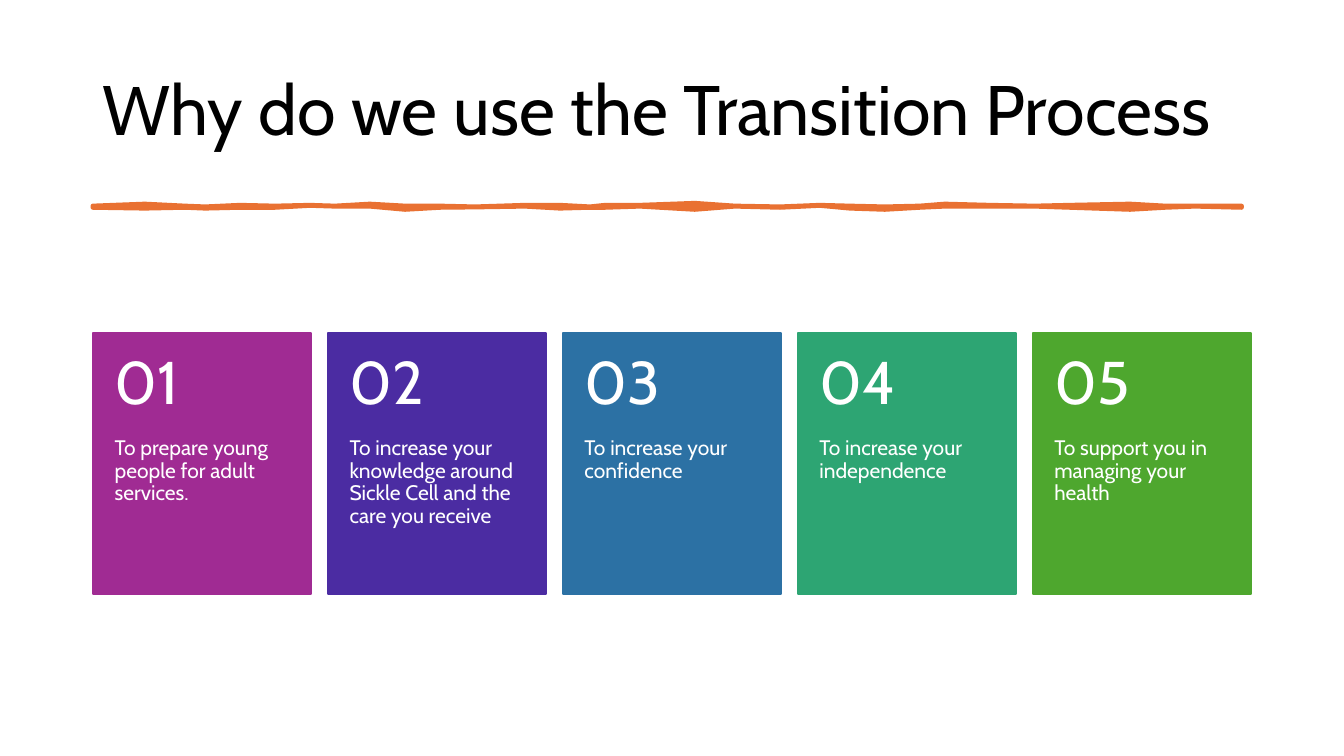
from pptx import Presentation
from pptx.dml.color import RGBColor
from pptx.enum.shapes import MSO_SHAPE
from pptx.enum.text import MSO_ANCHOR
from pptx.util import Cm, Pt


def paint(shape, color, line_width):
    shape.shadow.inherit = False
    shape.fill.solid()
    shape.fill.fore_color.rgb = RGBColor.from_string(color)
    shape.line.color.rgb = RGBColor.from_string(color)
    shape.line.width = Pt(line_width)


def add_text(text, place, size, color, anchor, insets):
    box = page.shapes.add_textbox(*[Cm(length) for length in place])
    frame = box.text_frame
    frame.word_wrap = True
    frame.vertical_anchor = anchor
    frame.margin_left = frame.margin_right = Cm(insets[0])
    frame.margin_top = Cm(insets[1])
    frame.margin_bottom = Cm(insets[2])
    frame.text = text
    para = frame.paragraphs[0]
    para.line_spacing = 0.9
    span = para.runs[0]
    span.font.name = "Cabin"
    span.font.size = Pt(size)
    span.font.color.rgb = RGBColor.from_string(color)


deck = Presentation()
deck.slide_width = Cm(33.87)
deck.slide_height = Cm(19.05)
page = deck.slides.add_slide(deck.slide_layouts[6])

add_text("Why do we use the Transition Process", (2.33, 1.01, 29.21, 3.68),
         50, "000000", MSO_ANCHOR.MIDDLE, (0.25, 0.13, 0.13))

brush_middle = 5.21
brush_profile = [
    (2.34, -0.02, 0.02), (3.65, -0.07, 0.04), (4.66, -0.02, 0.02),
    (5.17, 0, 0.04), (6.05, -0.04, 0.02), (6.93, -0.02, 0.02),
    (7.81, -0.04, -0.03), (8.44, -0.02, -0.01), (9.32, -0.07, -0.01),
    (10.21, -0.02, 0.07), (11.09, -0.02, 0.02), (11.97, 0, 0.01),
    (13.23, -0.04, -0.01), (14.11, -0.04, 0.04), (14.87, 0, 0.02),
    (15.25, -0.04, 0.02), (16.13, -0.04, -0.01), (17.51, -0.09, 0.07),
    (18.52, -0.02, -0.01), (19.66, 0, 0.02), (20.66, -0.04, -0.03),
    (21.42, -0.02, 0.04), (22.3, 0, 0.07), (23.18, -0.02, 0.02),
    (23.81, -0.07, -0.01), (24.95, -0.04, -0.01), (26.08, -0.02, -0.01),
    (26.96, -0.04, 0.02), (28.48, -0.07, 0.07), (29.36, -0.02, 0.02),
    (30.11, -0.02, -0.01), (31.29, -0.02, 0.02),
]
upper_edge = [(Cm(x), Cm(brush_middle + rise)) for x, rise, fall in brush_profile]
lower_edge = [(Cm(x), Cm(brush_middle + fall)) for x, rise, fall in brush_profile]
outline = upper_edge + lower_edge[::-1]
builder = page.shapes.build_freeform(*outline[0])
builder.add_line_segments(outline[1:], close=True)
paint(builder.convert_to_shape(), "E97132", 3.25)

cards = [
    ("A02B93", "To prepare young people for adult services."),
    ("4B2CA2", "To increase your knowledge around Sickle Cell and the care you receive"),
    ("2C71A4", "To increase your confidence"),
    ("2DA573", "To increase your independence"),
    ("4EA72E", "To support you in managing your health"),
]
card_top, card_width, card_height = 8.39, 5.49, 6.58
card_pitch = 5.92
number_height = 2.63

for index, (color, reason) in enumerate(cards):
    left = 2.35 + index * card_pitch
    card = page.shapes.add_shape(MSO_SHAPE.RECTANGLE, Cm(left), Cm(card_top),
                                 Cm(card_width), Cm(card_height))
    paint(card, color, 1.5)
    add_text(reason,
             (left, card_top + number_height, card_width, card_height - number_height),
             15, "FFFFFF", MSO_ANCHOR.TOP, (0.54, 0, 0.91))
    add_text(f"{index + 1:02}", (left, card_top, card_width, number_height),
             43, "FFFFFF", MSO_ANCHOR.MIDDLE, (0.54, 0.46, 0.46))

deck.save("out.pptx")
